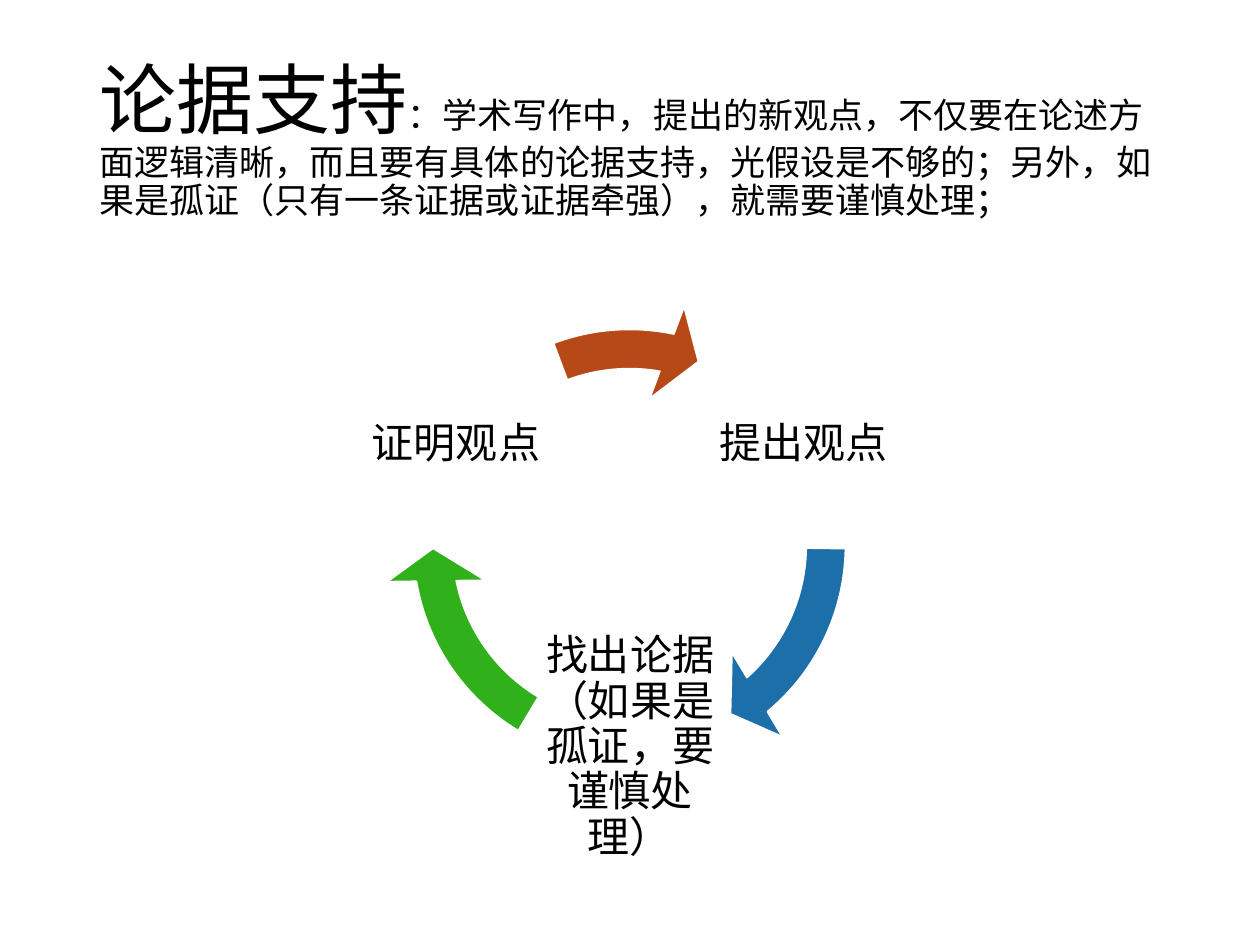
from pptx import Presentation
from pptx.dml.color import RGBColor
from pptx.enum.shapes import MSO_SHAPE
from pptx.enum.text import MSO_ANCHOR, PP_ALIGN
from pptx.util import Emu, Pt

BLACK = RGBColor(0x00, 0x00, 0x00)
WHITE = RGBColor(0xFF, 0xFF, 0xFF)
BLUE = RGBColor(0x1D, 0x6F, 0xA9)
GREEN = RGBColor(0x30, 0xB0, 0x1B)
RUST = RGBColor(0xB7, 0x49, 0x19)
FONT = "Times New Roman"

# Content: (text, size in points)
HEADING = [
    ("论据支持", 44),
    ("：学术写作中，提出的新观点，不仅要在论述方面逻辑清晰，而且要有具体的论据支持，"
     "光假设是不够的；另外，如果是孤证（只有一条证据或证据牵强），就需要谨慎处理；", 20),
]
# Step label, its centre in px, colour of the arrow leaving it, arrow end and start degrees
STEPS = [
    ("提出观点", (804, 445), BLUE, 49.43, 0.84),
    ("找出论据（如果是孤证，要谨慎处理）", (630, 748), GREEN, 169.57, 120.98),
    ("证明观点", (456, 445), RUST, 280.98, 249.43),
]

# Layout in px, 126 to the inch
PX = 914400 / 126
HEADING_BOX = (87, 50, 1086, 183)
LABEL_SIZE = 208
LABEL_INSET = 4
RING_BOX = (384, 300, 491, 491)
BAND, HEAD_ANGLE, HEAD_WIDTH = 0.08, 5.76, 0.1
ADJUST_PER_DEGREE = 0.6  # 60000 units a degree, 100000 units to 1.0


def emu(*lengths):
    return [Emu(round(length * PX)) for length in lengths]


def add_text(slide, box, parts, align, inset=None):
    frame = slide.shapes.add_textbox(*emu(*box)).text_frame
    frame.word_wrap = True
    frame.vertical_anchor = MSO_ANCHOR.MIDDLE
    if inset is not None:
        frame.margin_left, frame.margin_top, frame.margin_right, frame.margin_bottom = emu(*[inset] * 4)
    paragraph = frame.paragraphs[0]
    paragraph.alignment = align
    paragraph.line_spacing = 0.9
    for text, size in parts:
        run = paragraph.add_run()
        run.text = text
        run.font.size = Pt(size)
        run.font.name = FONT
        run.font.color.rgb = BLACK


def add_cycle_arrow(slide, colour, end, start):
    arrow = slide.shapes.add_shape(MSO_SHAPE.CIRCULAR_ARROW, *emu(*RING_BOX))
    arrow.shadow.inherit = False
    arrow.fill.solid()
    arrow.fill.fore_color.rgb = colour
    arrow.line.color.rgb = WHITE
    arrow.line.width = Pt(1)
    values = (BAND, HEAD_ANGLE, end * ADJUST_PER_DEGREE, start * ADJUST_PER_DEGREE, HEAD_WIDTH)
    for index, value in enumerate(values):
        arrow.adjustments[index] = value


def main():
    prs = Presentation()
    prs.slide_width, prs.slide_height = emu(1260, 945)
    slide = prs.slides.add_slide(prs.slide_layouts[6])

    # Heading
    add_text(slide, HEADING_BOX, HEADING, PP_ALIGN.LEFT)

    # Cycle: each label with the arrow to the next one
    for label, (x, y), colour, end, start in STEPS:
        box = (x - LABEL_SIZE / 2, y - LABEL_SIZE / 2, LABEL_SIZE, LABEL_SIZE)
        add_text(slide, box, [(label, 24)], PP_ALIGN.CENTER, LABEL_INSET)
        add_cycle_arrow(slide, colour, end, start)

    prs.save("out.pptx")


if __name__ == "__main__":
    main()
